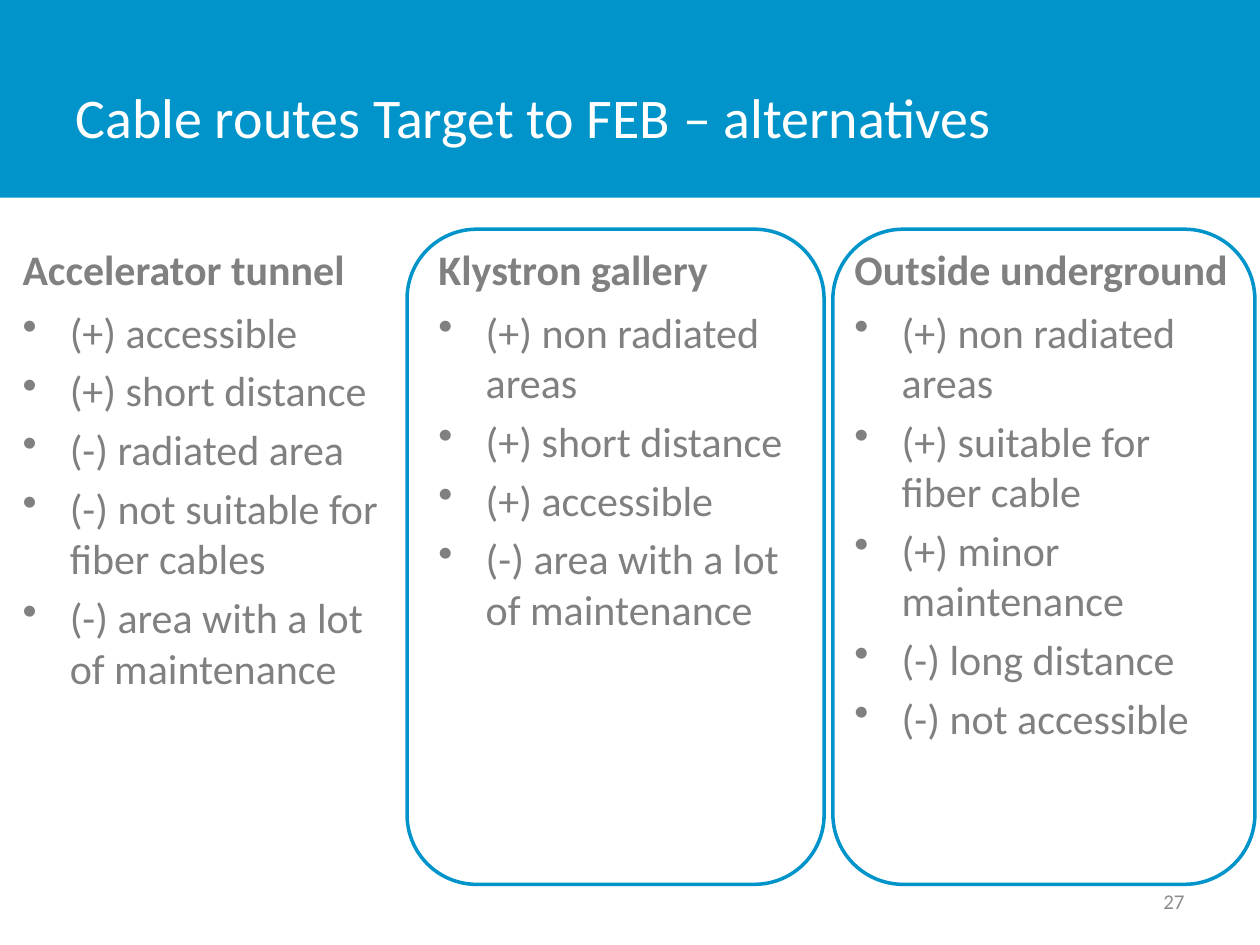
import pptx
import pptx.util
import pptx.dml.color
import pptx.enum.shapes
import pptx.enum.text
import lxml.etree

Pt = pptx.util.Pt
Shape = pptx.enum.shapes.MSO_SHAPE
Anchor = pptx.enum.text.MSO_ANCHOR
Align = pptx.enum.text.PP_ALIGN

# Content
TITLE = "Cable routes Target to FEB – alternatives"
ROUTES = [
    ("Accelerator tunnel", [
        "(+) accessible",
        "(+) short distance",
        "(-) radiated area",
        "(-) not suitable for fiber cables",
        "(-) area with a lot of maintenance"]),
    ("Klystron gallery", [
        "(+) non radiated areas",
        "(+) short distance",
        "(+) accessible",
        "(-) area with a lot of maintenance"]),
    ("Outside underground", [
        "(+) non radiated areas",
        "(+) suitable for fiber cable",
        "(+) minor maintenance",
        "(-) long distance",
        "(-) not accessible"]),
]
PAGE = "27"
BLUE, GREY, PALE, WHITE = "0094CA", "808080", "8C8C8C", "FFFFFF"

# Layout, in points
LEFT, STEP, WIDTH = 5.8, 237.7, 233.3
HEAD_TOP, HEAD_H, LIST_H = 121, 50.4, 311
FRAMES = [(232.6, 238.3), (475.9, 241.2)]  # left, width
FRAME_TOP, FRAME_H = 131, 374.4
INDENT = 27


def color(code):
    return pptx.dml.color.RGBColor.from_string(code)


def write(shape, lines, size, code, anchor, bold=False, gap=0, align=Align.LEFT):
    frame = shape.text_frame
    frame.word_wrap = True
    frame.auto_size = pptx.enum.text.MSO_AUTO_SIZE.NONE
    frame.vertical_anchor = anchor
    frame.text = "\n".join(lines)
    for para in frame.paragraphs:
        para.alignment = align
        para.space_before = Pt(gap)
        font = para.font
        font.name, font.size, font.bold = "Calibri", Pt(size), bold
        font.color.rgb = color(code)
    return frame


def bullet(para):
    props = para._p.get_or_add_pPr()
    props.set("marL", str(Pt(INDENT)))
    props.set("indent", str(-Pt(INDENT)))
    mark = pptx.oxml.parse_xml(
        '<a:buChar xmlns:a="http://schemas.openxmlformats.org/drawingml/2006/main" char="•"/>')
    props.insert_element_before(mark, "a:tabLst", "a:defRPr", "a:extLst")


def place(shape, left, top, width, height):
    shape.left, shape.top = Pt(left), Pt(top)
    shape.width, shape.height = Pt(width), Pt(height)


def main():
    deck = pptx.Presentation()
    deck.slide_width, deck.slide_height = Pt(720), Pt(540)
    slide = deck.slides.add_slide(deck.slide_layouts[5])
    shapes = slide.shapes

    def box(*area):
        return shapes.add_textbox(*map(Pt, area))

    # Blue band, behind the title
    band = shapes.add_shape(Shape.RECTANGLE, 0, 0, Pt(720), Pt(113))
    band.shadow.inherit = False
    band.fill.solid()
    band.fill.fore_color.rgb = color(BLUE)
    band.line.fill.background()
    shapes.title._element.addprevious(band._element)

    # Title
    place(shapes.title, 36, 21.6, 562.3, 90)
    write(shapes.title, [TITLE], 32, WHITE, Anchor.MIDDLE)

    # Columns
    for i, (head, points) in enumerate(ROUTES):
        left = LEFT + i * STEP
        write(box(left, HEAD_TOP, WIDTH, HEAD_H), [head], 24, GREY,
              Anchor.BOTTOM, bold=True, gap=4.8)
        body = write(box(left, HEAD_TOP + HEAD_H, WIDTH, LIST_H), points, 24, GREY,
                     Anchor.TOP, gap=4.8)
        for para in body.paragraphs:
            bullet(para)

    # Rounded frames
    for left, width in FRAMES:
        frame = shapes.add_shape(Shape.ROUNDED_RECTANGLE, Pt(left), Pt(FRAME_TOP),
                                 Pt(width), Pt(FRAME_H))
        frame.shadow.inherit = False
        frame.fill.background()
        frame.line.color.rgb = color(BLUE)
        frame.line.width = Pt(2)

    # Page number
    write(box(516.2, 500.4, 167.8, 28.8), [PAGE], 12, PALE, Anchor.MIDDLE,
          align=Align.RIGHT)

    deck.save("out.pptx")


if __name__ == "__main__":
    main()
